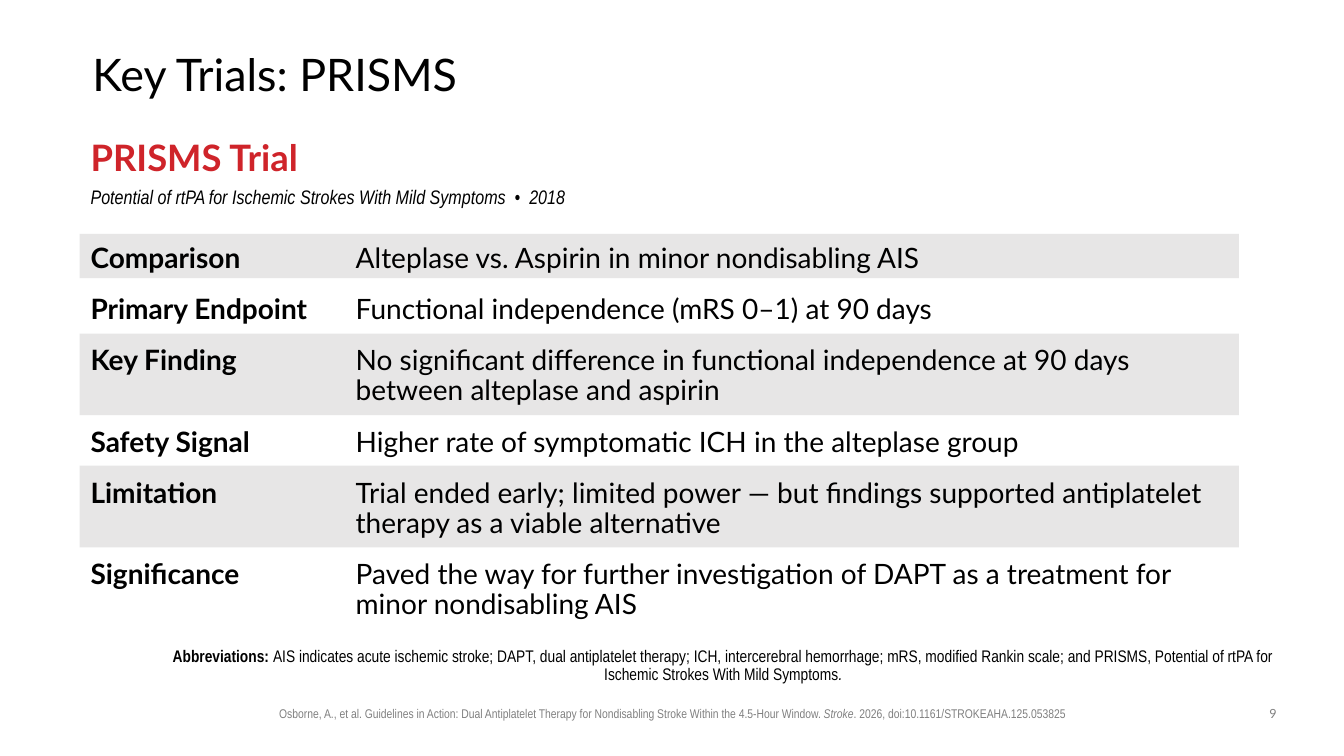
from lxml import etree
from pptx import Presentation
from pptx.dml.color import RGBColor
from pptx.enum.shapes import MSO_SHAPE
from pptx.enum.text import MSO_ANCHOR, MSO_AUTO_SIZE, PP_ALIGN
from pptx.oxml.ns import qn
from pptx.util import Emu, Inches, Pt

RECTANGLE = MSO_SHAPE.RECTANGLE
TOP, MIDDLE, BOTTOM = MSO_ANCHOR.TOP, MSO_ANCHOR.MIDDLE, MSO_ANCHOR.BOTTOM
NO_AUTOFIT = MSO_AUTO_SIZE.NONE
LEFT, CENTER = PP_ALIGN.LEFT, PP_ALIGN.CENTER

BLACK = RGBColor(0x00, 0x00, 0x00)
RED = RGBColor(0xCF, 0x24, 0x2A)
GREY = RGBColor(0x80, 0x80, 0x80)
BAND = RGBColor(0xE7, 0xE6, 0xE6)

COLUMNS, ROWS = 160, 90
CONTENT_WIDTH = 138
HANGING = Inches(2.63)
INSETS = (0.1, 0.05, 0.1, 0.05)

TITLE = {"name": "Lato", "size": Pt(32), "bold": False, "color": BLACK}
TRIAL = {"name": "Lato", "size": Pt(26), "bold": True, "color": RED}
SUBTITLE = {"name": "Arial Narrow", "size": Pt(14), "italic": True, "color": BLACK}
DETAIL = {"name": "Lato", "size": Pt(20), "bold": False, "color": BLACK}
LABEL = {**DETAIL, "bold": True}
NOTE = {"name": "Arial Narrow", "size": Pt(12), "color": BLACK}
CITATION = {"name": "Arial Narrow", "size": Pt(9), "color": GREY}
NUMBER = {**CITATION, "name": "Lato"}

FINDINGS = [
    ("Comparison", "Alteplase vs. Aspirin in minor nondisabling AIS"),
    ("Primary Endpoint", "Functional independence (mRS 0–1) at 90 days"),
    ("Key Finding", "No significant difference in functional independence at 90 days "
     "between alteplase and aspirin"),
    ("Safety Signal", "Higher rate of symptomatic ICH in the alteplase group"),
    ("Limitation", "Trial ended early; limited power — but findings supported "
     "antiplatelet therapy as a viable alternative"),
    ("Significance", "Paved the way for further investigation of DAPT as a treatment "
     "for minor nondisabling AIS"),
]


class TrialSlide:
    def __init__(self, prs):
        self.column = prs.slide_width / COLUMNS
        self.row = prs.slide_height / ROWS
        self.slide = prs.slides.add_slide(prs.slide_layouts[5])

    def box(self, left, top, width, height):
        return (Emu(round(left * self.column)), Emu(round(top * self.row)),
                Emu(round(width * self.column)), Emu(round(height * self.row)))

    def frame(self, sp, anchor, insets):
        tf = sp.text_frame
        settings = {"word_wrap": True, "auto_size": NO_AUTOFIT, "vertical_anchor": anchor}
        sides = ("margin_left", "margin_top", "margin_right", "margin_bottom")
        settings.update(zip(sides, map(Inches, insets)))
        for key, value in settings.items():
            setattr(tf, key, value)
        return tf

    def title(self, text, *at):
        sp = self.slide.shapes.title
        sp.left, sp.top, sp.width, sp.height = self.box(*at)
        tf = self.frame(sp, MIDDLE, (0, 0, 0, 0))
        self.paragraph(tf, [(text, TITLE)], alignment=LEFT, line_spacing=0.9)

    def text_box(self, *at, anchor=TOP, insets=INSETS):
        return self.frame(self.slide.shapes.add_textbox(*self.box(*at)), anchor, insets)

    def band(self, *at):
        sp = self.slide.shapes.add_shape(RECTANGLE, *self.box(*at))
        sp.shadow.inherit = False
        sp.fill.solid()
        sp.fill.fore_color.rgb = BAND
        sp.line.fill.background()

    def paragraph(self, tf, runs, **layout):
        p = tf.paragraphs[0]
        if p.runs:
            p = tf.add_paragraph()
        for key, value in layout.items():
            setattr(p, key, value)
        for text, style in runs:
            r = p.add_run()
            r.text = text
            for key, value in style.items():
                if key == "color":
                    r.font.color.rgb = value
                else:
                    setattr(r.font, key, value)
        return p

    def finding(self, tf, label, detail):
        p = self.paragraph(tf, [(label, LABEL), ("\t" + detail, DETAIL)],
                           line_spacing=0.9, space_before=Pt(15))
        pPr = p._p.get_or_add_pPr()
        pPr.set("marL", str(HANGING))
        pPr.set("indent", str(-HANGING))
        tabs = etree.SubElement(pPr, qn("a:tabLst"))
        etree.SubElement(tabs, qn("a:tab"), pos=str(HANGING), algn="l")


def main():
    prs = Presentation()
    prs.slide_width, prs.slide_height = Inches(13.33), Inches(7.5)
    s = TrialSlide(prs)

    s.title("Key Trials: PRISMS", 11, 4.8, CONTENT_WIDTH, 8.64)
    for top, height in ((27.84, 5.28), (39.72, 9.72), (55.44, 9.72)):
        s.band(9.48, top, CONTENT_WIDTH, height)

    tf = s.text_box(9.6, 16.08, CONTENT_WIDTH, 60)
    s.paragraph(tf, [("PRISMS Trial", TRIAL)], line_spacing=0.9, space_after=Pt(6))
    s.paragraph(tf, [("Potential of rtPA for Ischemic Strokes With Mild Symptoms  •  2018",
                      SUBTITLE)], line_spacing=0.9, space_after=Pt(10))
    for label, detail in FINDINGS:
        s.finding(tf, label, detail)

    tf = s.text_box(17.76, 77.64, 137.88, 4.44, anchor=BOTTOM, insets=(0, 0.05, 0.1, 0.05))
    s.paragraph(tf, [
        ("Abbreviations: ", {**NOTE, "bold": True}),
        ("AIS indicates acute ischemic stroke; DAPT, dual antiplatelet therapy; "
         "ICH, intercerebral hemorrhage; mRS, modified Rankin scale; and PRISMS, "
         "Potential of rtPA for Ischemic Strokes With Mild Symptoms", NOTE),
        (".", {**NOTE, "italic": True}),
    ], alignment=CENTER, line_spacing=0.9)

    tf = s.text_box(28.32, 83.4, 103.44, 3)
    s.paragraph(tf, [
        ("Osborne, A., et al. Guidelines in Action: Dual Antiplatelet Therapy for "
         "Nondisabling Stroke Within the 4.5-Hour Window. ", CITATION),
        ("Stroke", {**CITATION, "italic": True}),
        (". 2026, doi:10.1161/STROKEAHA.125.053825", CITATION),
    ], alignment=CENTER)
    tf = s.text_box(149.04, 83.4, 5.04, 3.12)
    s.paragraph(tf, [("9", NUMBER)], alignment=CENTER)

    prs.save("out.pptx")


if __name__ == "__main__":
    main()
